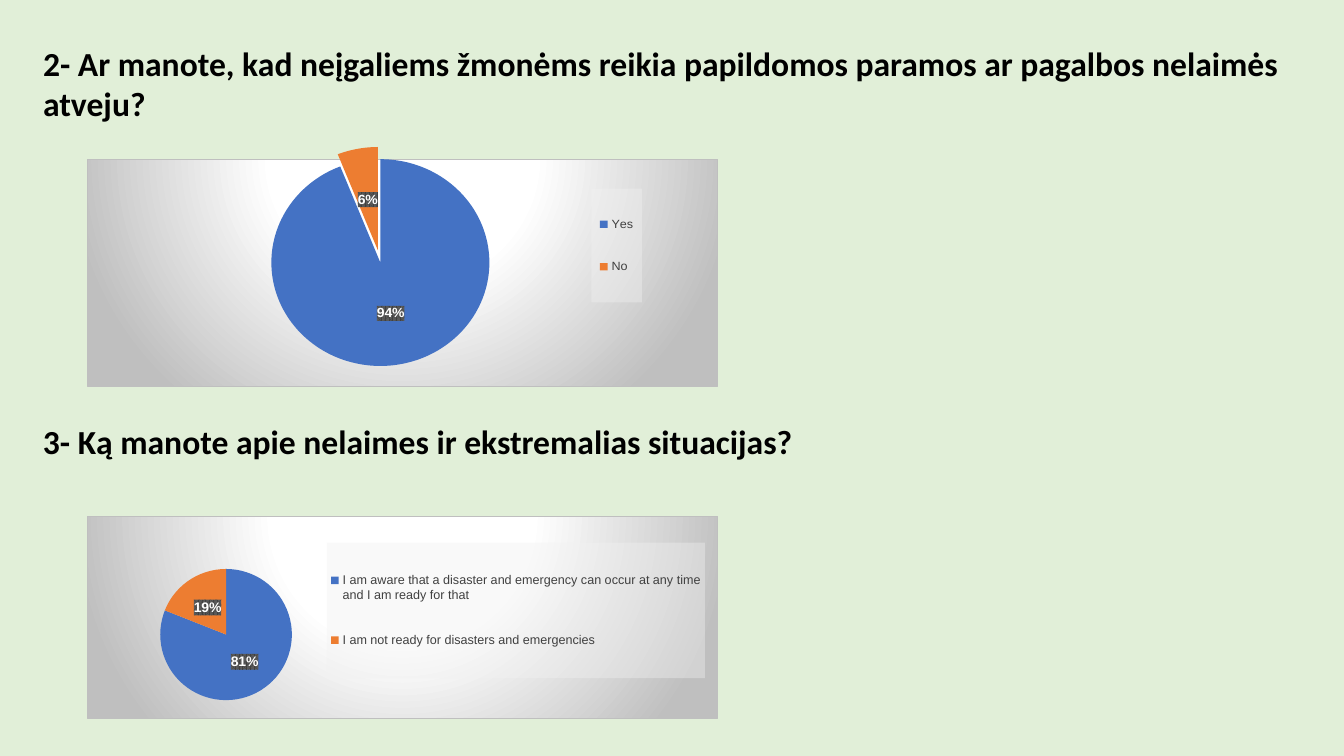
import pptx
import pptx.util
import pptx.chart.data
import pptx.dml.color
import pptx.enum.chart
import pptx.enum.text
import pptx.oxml
import pptx.oxml.ns

# Content (boxes are left, top, width, height in px; layouts are chart fractions)
SLIDE_SIZE = (1344, 756)
CHART_LEFT, CHART_WIDTH = 87, 631
QUESTIONS = [
    {
        "heading": "2- Ar manote, kad neįgaliems žmonėms reikia papildomos paramos ar pagalbos nelaimės atveju?",
        "heading_box": (33, 38, 1287, 92),
        "chart_top": 147, "chart_height": 240,
        "answers": {"Yes": 94, "No": 6},
        "plot_layout": (0.2, 0, 0.53, 0.91),
        "legend_layout": (0.8, 0.13, 0.08, 0.5),
        "explosion": {"No": 12},
    },
    {
        "heading": "3- Ką manote apie nelaimes ir ekstremalias situacijas?",
        "heading_box": (33, 416, 1197, 50),
        "chart_top": 516, "chart_height": 203,
        "answers": {
            "I am aware that a disaster and emergency can occur at any time and I am ready for that": 81,
            "I am not ready for disasters and emergencies": 19,
        },
        "plot_layout": (0.1, 0.26, 0.24, 0.65),
        "legend_layout": (0.38, 0.13, 0.6, 0.67),
        "explosion": {},
    },
]

# Theme
THEME = {
    "background": "E1EFD8",
    "slices": ["4472C4", "ED7D31"],
    "heading": {"name": "Calibri", "size": 24, "bold": True, "color": "000000"},
    "chart": {"name": "Arial", "size": 10, "color": "000000"},
    "legend": {"name": "Arial", "size": 9, "color": "404040"},
    "label": {"name": "Arial", "size": 10, "bold": True, "color": "FFFFFF"},
}
NAMESPACES = pptx.oxml.ns.nsdecls("c", "a")
CHART_FILL = f"""<c:spPr {NAMESPACES}>
  <a:gradFill><a:gsLst>
    <a:gs pos="0"><a:srgbClr val="FFFFFF"/></a:gs>
    <a:gs pos="39000"><a:srgbClr val="FFFFFF"/></a:gs>
    <a:gs pos="100000"><a:srgbClr val="BFBFBF"/></a:gs>
  </a:gsLst><a:path path="circle">
    <a:fillToRect l="50000" t="-80000" r="50000" b="180000"/>
  </a:path></a:gradFill>
  <a:ln w="9525"><a:solidFill><a:srgbClr val="BFBFBF"/></a:solidFill></a:ln>
</c:spPr>"""
LEGEND_FILL = f"""<c:spPr {NAMESPACES}><a:solidFill>
  <a:srgbClr val="F2F2F2"><a:alpha val="39000"/></a:srgbClr>
</a:solidFill></c:spPr>"""
LABEL_FILL = f"""<c:spPr {NAMESPACES}><a:pattFill prst="pct75">
  <a:fgClr><a:srgbClr val="404040"/></a:fgClr>
  <a:bgClr><a:srgbClr val="595959"/></a:bgClr>
</a:pattFill></c:spPr>"""


# Helpers
def px(length):
    return round(length * 914400 / 100.8)


def rgb(value):
    return pptx.dml.color.RGBColor.from_string(value)


def set_values(target, values):
    for name, value in values.items():
        setattr(target, name, value)


def set_font(font, style):
    for name, value in style.items():
        if name == "color":
            font.color.rgb = rgb(value)
        else:
            setattr(font, name, pptx.util.Pt(value) if name == "size" else value)


def manual_layout(fractions, inner=False):
    target = '<c:layoutTarget val="inner"/>' if inner else ""
    modes = "".join(f'<c:{axis}Mode val="edge"/>' for axis in "xy")
    sizes = "".join(f'<c:{side} val="{value}"/>' for side, value in zip("xywh", fractions))
    return pptx.oxml.parse_xml(
        f"<c:layout {NAMESPACES}><c:manualLayout>{target}{modes}{sizes}</c:manualLayout></c:layout>")


def replace_layout(parent, layout, position):
    for old_layout in parent.xpath("c:layout"):
        parent.remove(old_layout)
    parent.insert(position, layout)


def fill_heading(shape, question):
    set_values(shape, dict(zip(("left", "top", "width", "height"), map(px, question["heading_box"]))))
    frame = shape.text_frame
    set_values(frame, {
        "text": question["heading"], "word_wrap": True,
        "auto_size": pptx.enum.text.MSO_AUTO_SIZE.NONE,
        "vertical_anchor": pptx.enum.text.MSO_ANCHOR.TOP,
    })
    paragraph = frame.paragraphs[0]
    paragraph.alignment = pptx.enum.text.PP_ALIGN.LEFT
    set_font(paragraph.runs[0].font, THEME["heading"])


def add_pie(slide, question):
    answers = question["answers"]
    data = pptx.chart.data.CategoryChartData()
    data.categories = list(answers)
    data.add_series("Series 1", list(answers.values()))
    box = (CHART_LEFT, question["chart_top"], CHART_WIDTH, question["chart_height"])
    chart = slide.shapes.add_chart(pptx.enum.chart.XL_CHART_TYPE.PIE, *map(px, box), data).chart
    set_values(chart, {"has_title": False, "has_legend": True})
    set_font(chart.font, THEME["chart"])
    space = chart._chartSpace
    space.xpath("c:txPr")[0].addprevious(pptx.oxml.parse_xml(CHART_FILL))
    replace_layout(space.xpath("c:chart/c:plotArea")[0],
                   manual_layout(question["plot_layout"], inner=True), 0)

    # Legend
    legend = chart.legend
    set_values(legend, {"position": pptx.enum.chart.XL_LEGEND_POSITION.RIGHT,
                        "include_in_layout": False})
    set_font(legend.font, THEME["legend"])
    replace_layout(legend._element, manual_layout(question["legend_layout"]), 1)
    legend._element.xpath("c:txPr")[0].addprevious(pptx.oxml.parse_xml(LEGEND_FILL))

    # Slices
    plot = chart.plots[0]
    plot.vary_by_categories = True
    series = plot.series[0]
    for index, (answer, color) in enumerate(zip(answers, THEME["slices"])):
        fill = series.points[index].format.fill
        fill.solid()
        fill.fore_color.rgb = rgb(color)
        if answer in question["explosion"]:
            explosion = pptx.oxml.parse_xml(
                f'<c:explosion {NAMESPACES} val="{question["explosion"][answer]}"/>')
            series._element.xpath(f"c:dPt[c:idx/@val='{index}']/c:spPr")[0].addprevious(explosion)

    # Percent labels
    labels = series.data_labels
    set_values(labels, {
        "show_percentage": True, "show_value": False,
        "number_format": "0%", "number_format_is_linked": False,
        "position": pptx.enum.chart.XL_LABEL_POSITION.CENTER,
    })
    set_font(labels.font, THEME["label"])
    labels._element.xpath("c:txPr")[0].addprevious(pptx.oxml.parse_xml(LABEL_FILL))


def main():
    presentation = pptx.Presentation()
    set_values(presentation, dict(zip(("slide_width", "slide_height"), map(px, SLIDE_SIZE))))
    slide = presentation.slides.add_slide(presentation.slide_layouts[5])
    background = slide.background.fill
    background.solid()
    background.fore_color.rgb = rgb(THEME["background"])

    # Headings: the first is the slide title
    headings = [slide.shapes.title, slide.shapes.add_textbox(0, 0, 0, 0)]
    for heading, question in zip(headings, QUESTIONS):
        fill_heading(heading, question)
        add_pie(slide, question)
    presentation.save("out.pptx")


if __name__ == "__main__":
    main()
